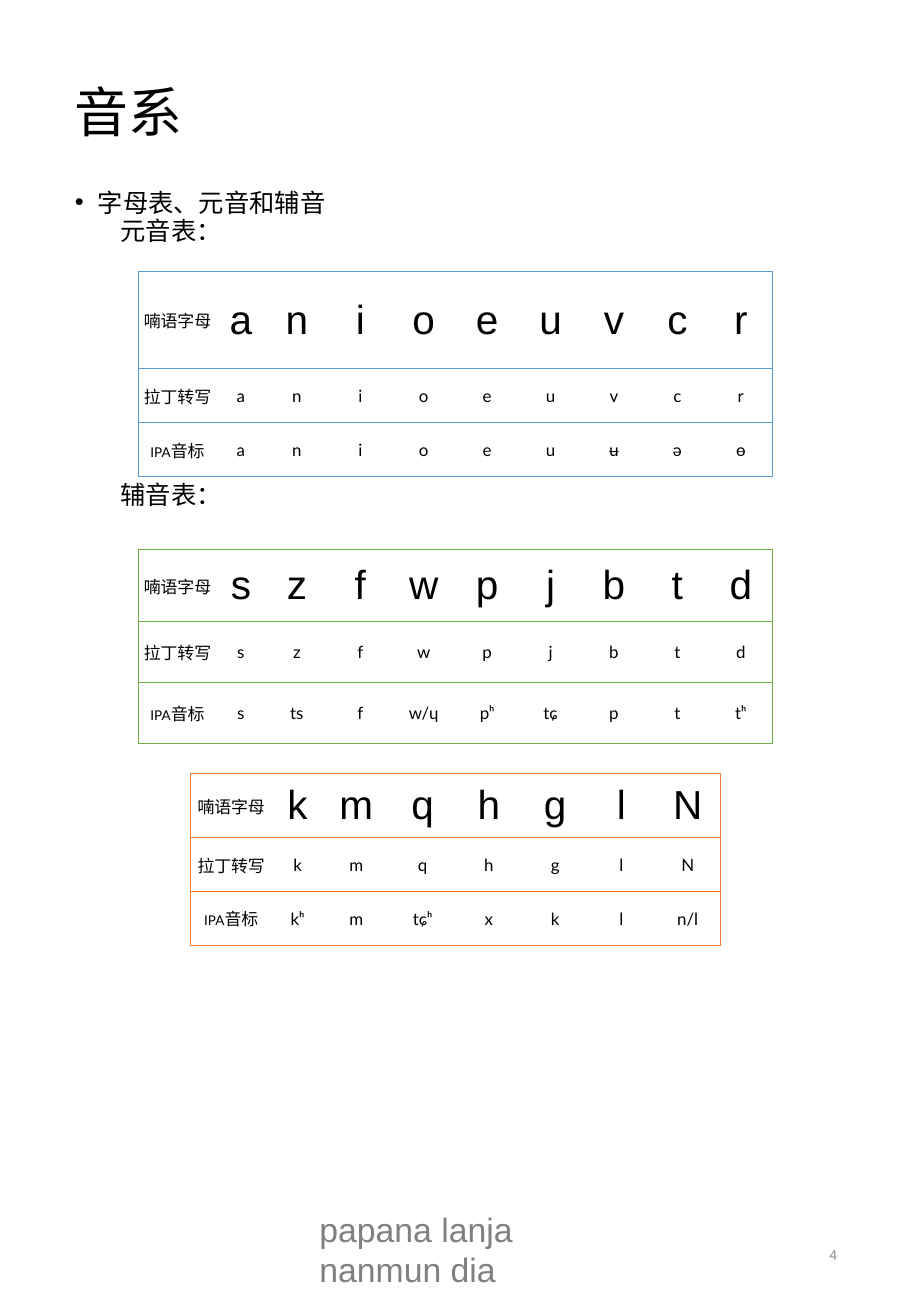
import pptx
import pptx.dml.color
import pptx.enum.text
import pptx.oxml
import pptx.oxml.ns
import pptx.util

Pt = pptx.util.Pt
ALIGN = pptx.enum.text.PP_ALIGN
ANCHOR = pptx.enum.text.MSO_ANCHOR
CHINESE = "Noto Sans CJK SC"
BLACK = "000000"
ROW_LABELS = ("喃语字母", "拉丁转写", "IPA音标")
NAMESPACE = pptx.oxml.ns.nsdecls("a")


def colour(hex_string):
    return pptx.dml.color.RGBColor.from_string(hex_string)


def set_font(paragraph, name, size, hex_string=BLACK):
    font = paragraph.font
    font.name = name
    font.size = Pt(size)
    font.color.rgb = colour(hex_string)
    latin = font._element.find(pptx.oxml.ns.qn("a:latin"))
    latin.addnext(pptx.oxml.parse_xml(f'<a:ea {NAMESPACE} typeface="{CHINESE}"/>'))


def add_text_frame(slide, box, anchor=ANCHOR.TOP):
    text_frame = slide.shapes.add_textbox(*map(Pt, box)).text_frame
    text_frame.word_wrap = True
    text_frame.vertical_anchor = anchor
    return text_frame


def add_line_of_text(slide, box, text, name, size, hex_string=BLACK,
                     anchor=ANCHOR.MIDDLE, align=ALIGN.LEFT):
    paragraph = add_text_frame(slide, box, anchor).paragraphs[0]
    paragraph.text = text
    paragraph.alignment = align
    set_font(paragraph, name, size, hex_string)


def add_headings(slide, box):
    """Place the bulleted topic and the heading above each group of tables."""
    text_frame = add_text_frame(slide, box)
    headings = (("字母表、元音和辅音", 0), ("元音表：", 2.2), ("辅音表：", 142))
    for index, (text, space_before) in enumerate(headings):
        paragraph = text_frame.paragraphs[0] if index == 0 else text_frame.add_paragraph()
        paragraph.text = text
        paragraph.line_spacing = 0.8
        paragraph.space_before = Pt(space_before)
        properties = paragraph._p.get_or_add_pPr()
        if index == 0:
            properties.set("marL", str(Pt(13.5)))
            properties.set("indent", str(Pt(-13.5)))
            properties.append(pptx.oxml.parse_xml(f'<a:buFont {NAMESPACE} typeface="Arial"/>'))
            properties.append(pptx.oxml.parse_xml(f'<a:buChar {NAMESPACE} char="•"/>'))
        else:
            paragraph.level = 1
            properties.set("marL", str(Pt(27)))
            properties.set("indent", "0")
        set_font(paragraph, CHINESE, 15)


def set_borders(cell, hex_string, is_first, is_last):
    """Rule every row and close the two outer sides of the table."""
    properties = cell._tc.get_or_add_tcPr()
    sides = (("lnL", is_first), ("lnR", is_last), ("lnT", True), ("lnB", True))
    for position, (side, visible) in enumerate(sides):
        fill = (f'<a:solidFill><a:srgbClr val="{hex_string}"/></a:solidFill>'
                if visible else "<a:noFill/>")
        properties.insert(position, pptx.oxml.parse_xml(
            f'<a:{side} {NAMESPACE} w="{Pt(0.5)}">{fill}</a:{side}>'))


def fill_cell(cell, text, row, column):
    cell.fill.background()
    cell.vertical_anchor = ANCHOR.MIDDLE
    cell.margin_left = cell.margin_right = cell.margin_top = Pt(0.72)
    cell.margin_bottom = 0
    paragraph = cell.text_frame.paragraphs[0]
    paragraph.alignment = ALIGN.CENTER
    if text == ROW_LABELS[2]:
        for part, size in (("IPA", 8), ("音标", 10)):
            run = paragraph.add_run()
            run.text = part
            run.font.size = Pt(size)
        set_font(paragraph, "Lato", 10)
        return
    paragraph.text = text
    if column == 0:
        set_font(paragraph, CHINESE, 10)
    elif row == 0:
        set_font(paragraph, "Arial", 24)
    else:
        set_font(paragraph, "Lato", 10)


def add_letter_table(slide, left, top, widths, heights, hex_string, letters, sounds):
    """Widths are those of label, first letter and each other letter; heights of first and other rows."""
    letters, sounds = letters.split(), sounds.split()
    rows = [[label] + values for label, values in zip(ROW_LABELS, (letters, letters, sounds))]
    column_widths = [*widths[:2]] + [widths[2]] * (len(letters) - 1)
    row_heights = [heights[0], heights[1], heights[1]]
    table = slide.shapes.add_table(len(rows), len(column_widths), Pt(left), Pt(top),
                                   Pt(sum(column_widths)), Pt(sum(row_heights))).table
    table.first_row = table.horz_banding = False
    for column, width in zip(table.columns, column_widths):
        column.width = Pt(width)
    for row_index, values in enumerate(rows):
        table.rows[row_index].height = Pt(row_heights[row_index])
        for column_index, text in enumerate(values):
            cell = table.cell(row_index, column_index)
            fill_cell(cell, text, row_index, column_index)
            set_borders(cell, hex_string, column_index == 0, column_index == len(letters))


def add_footer(slide, left, top):
    add_line_of_text(slide, (left, top, 158.4, 54), "papana lanja nanmun dia",
                     "Arial", 20, "808080", ANCHOR.TOP)
    add_line_of_text(slide, (left + 199.4, top + 10, 121.7, 41.8), "4",
                     "Calibri", 9, "8C8C8C", align=ALIGN.RIGHT)


def main():
    presentation = pptx.Presentation()
    presentation.slide_width = Pt(540)
    presentation.slide_height = Pt(780)
    slide = presentation.slides.add_slide(presentation.slide_layouts[6])
    add_line_of_text(slide, (37.4, 31, 465.8, 69), "音系", CHINESE, 32)
    add_headings(slide, (37.4, 110.9, 465.8, 638))
    nine_letters = (46.4, 28.8, 37.6)
    add_letter_table(slide, 82, 161, nine_letters, (57.4, 32), "5B9BD5",
                     "a n i o e u v c r", "a n i o e u ʉ ə ɵ")
    add_letter_table(slide, 82, 325.5, nine_letters, (42.7, 36.1), "70AD47",
                     "s z f w p j b t d", "s ts f w/ɥ pʰ tɕ p t tʰ")
    add_letter_table(slide, 112.8, 458.3, (48.4, 30.4, 39.3), (37.9, 32), "ED7D31",
                     "k m q h g l N", "kʰ m tɕʰ x k l n/l")
    add_footer(slide, 182.2, 712.8)
    presentation.save("out.pptx")


if __name__ == "__main__":
    main()
